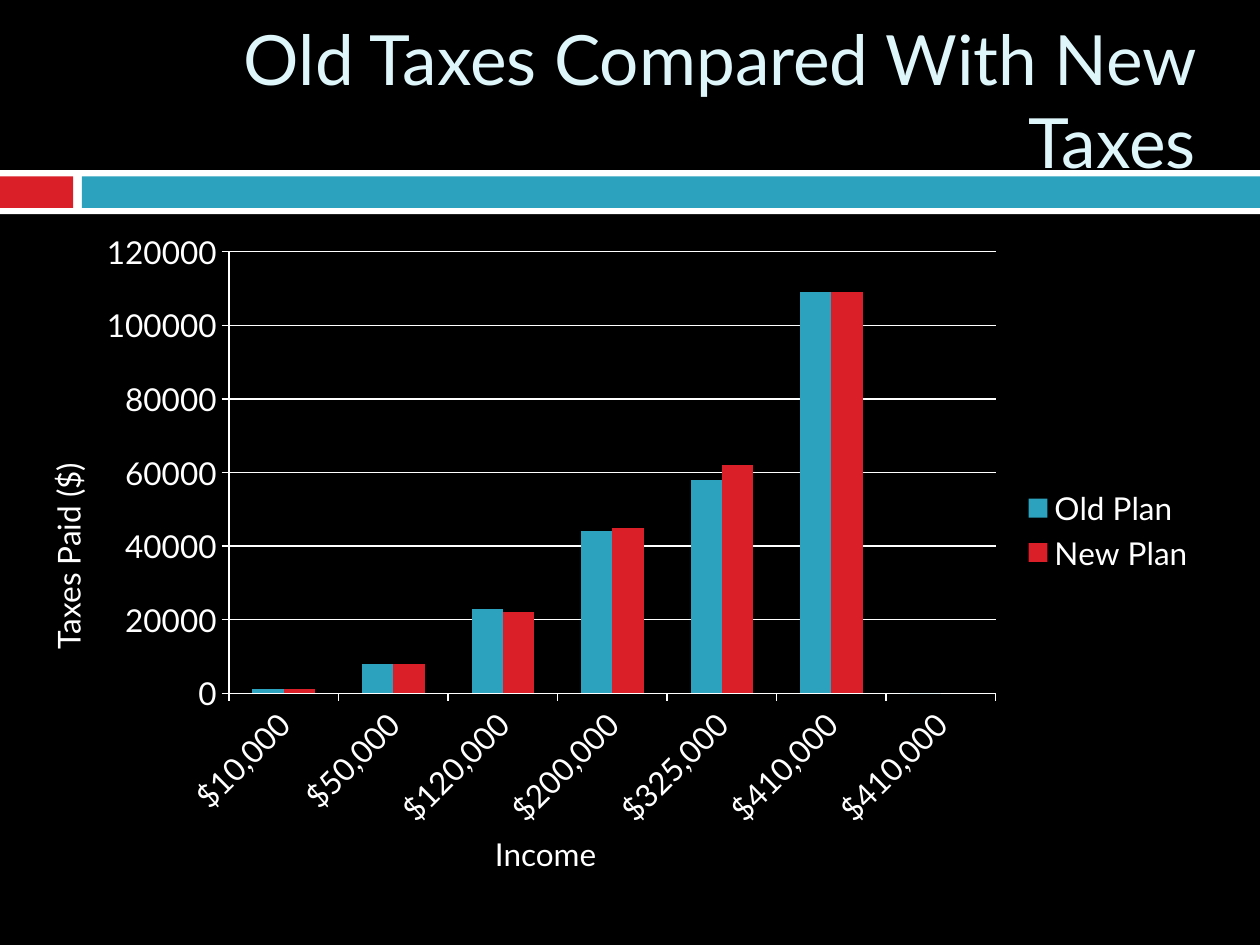
import pptx
import pptx.chart.data
import pptx.dml.color
import pptx.enum.chart
import pptx.enum.shapes
import pptx.enum.text
import pptx.util

Inches = pptx.util.Inches
Pt = pptx.util.Pt
RGBColor = pptx.dml.color.RGBColor
ALIGN = pptx.enum.text.PP_ALIGN
ANCHOR = pptx.enum.text.MSO_ANCHOR

BLACK = RGBColor(0x00, 0x00, 0x00)
WHITE = RGBColor(0xFF, 0xFF, 0xFF)
RED = RGBColor(0xDA, 0x1F, 0x28)
BLUE = RGBColor(0x2D, 0xA2, 0xBF)
PALE = RGBColor(0xDE, 0xF5, 0xFA)


def add_text(tf, text, font="Lato", size=18, color=WHITE, align=ALIGN.LEFT):
    p = tf.paragraphs[0]
    p.alignment = align
    r = p.add_run()
    r.text = text
    r.font.name = font
    r.font.size = Pt(size)
    r.font.color.rgb = color


class Deck:
    font = "Lato"
    size = 18

    def __init__(self, prs):
        self.s = prs.slides.add_slide(prs.slide_layouts[6])
        fill = self.s.background.fill
        fill.solid()
        fill.fore_color.rgb = BLACK

    def rect(self, x, y, w, h, color):
        sp = self.s.shapes.add_shape(
            pptx.enum.shapes.MSO_SHAPE.RECTANGLE,
            Inches(x), Inches(y), Inches(w), Inches(h))
        sp.shadow.inherit = False
        sp.fill.solid()
        sp.fill.fore_color.rgb = color
        sp.line.fill.background()

    def text(self, x, y, w, h, text, anchor=ANCHOR.TOP, rotation=0, **fmt):
        sp = self.s.shapes.add_textbox(Inches(x), Inches(y), Inches(w), Inches(h))
        sp.rotation = rotation
        tf = sp.text_frame
        tf.word_wrap = True
        tf.vertical_anchor = anchor
        add_text(tf, text, font=self.font, **fmt)

    def column_chart(self, x, y, w, h, categories, series):
        data = pptx.chart.data.CategoryChartData()
        data.categories = categories
        data.categories.number_format = '"$"#,##0'
        for name, values, _ in series:
            data.add_series(name, values)
        chart = self.s.shapes.add_chart(
            pptx.enum.chart.XL_CHART_TYPE.COLUMN_CLUSTERED,
            Inches(x), Inches(y), Inches(w), Inches(h), data).chart
        chart.has_title = False
        chart.font.name = self.font
        chart.font.size = Pt(self.size)
        chart.font.color.rgb = WHITE

        # Columns
        plot = chart.plots[0]
        plot.gap_width = 150
        plot.overlap = 0
        plot.vary_by_categories = False
        for ser, (_, _, color) in zip(plot.series, series):
            ser.format.fill.solid()
            ser.format.fill.fore_color.rgb = color

        # Axes and gridlines
        chart.value_axis.has_major_gridlines = True
        lines = [chart.value_axis.major_gridlines.format.line]
        for axis in (chart.category_axis, chart.value_axis):
            axis.major_tick_mark = pptx.enum.chart.XL_TICK_MARK.OUTSIDE
            axis.minor_tick_mark = pptx.enum.chart.XL_TICK_MARK.NONE
            lines.append(axis.format.line)
        for line in lines:
            line.color.rgb = WHITE
            line.width = Pt(0.75)

        # Legend
        chart.has_legend = True
        chart.legend.position = pptx.enum.chart.XL_LEGEND_POSITION.RIGHT
        chart.legend.include_in_layout = False


def main():
    prs = pptx.Presentation()
    prs.slide_width = Inches(10)
    prs.slide_height = Inches(7.5)
    deck = Deck(prs)

    # Divider band
    deck.rect(0, 1.35, 10, 0.35, WHITE)
    deck.rect(0, 1.4, 0.58, 0.25, RED)
    deck.rect(0.65, 1.4, 9.35, 0.25, BLUE)

    # Title
    deck.text(0.67, 0.25, 8.92, 1.08, "Old Taxes Compared With New Taxes",
              anchor=ANCHOR.MIDDLE, size=39.6, color=PALE, align=ALIGN.RIGHT)

    # Tax chart
    incomes = [10000, 50000, 120000, 200000, 325000, 410000, 410000]
    plans = [
        ("Old Plan", [1000, 8000, 23000, 44000, 58000, 109000, 0], BLUE),
        ("New Plan", [1000, 8000, 22000, 45000, 62000, 109000, None], RED),
    ]
    deck.column_chart(0.67, 1.75, 8.92, 4.92, incomes, plans)

    # Axis captions
    deck.text(3.83, 6.58, 3.08, 0.71, "Income")
    deck.text(-0.42, 4.09, 1.92, 0.4, "Taxes Paid ($)", rotation=270)

    prs.save("out.pptx")


if __name__ == "__main__":
    main()
